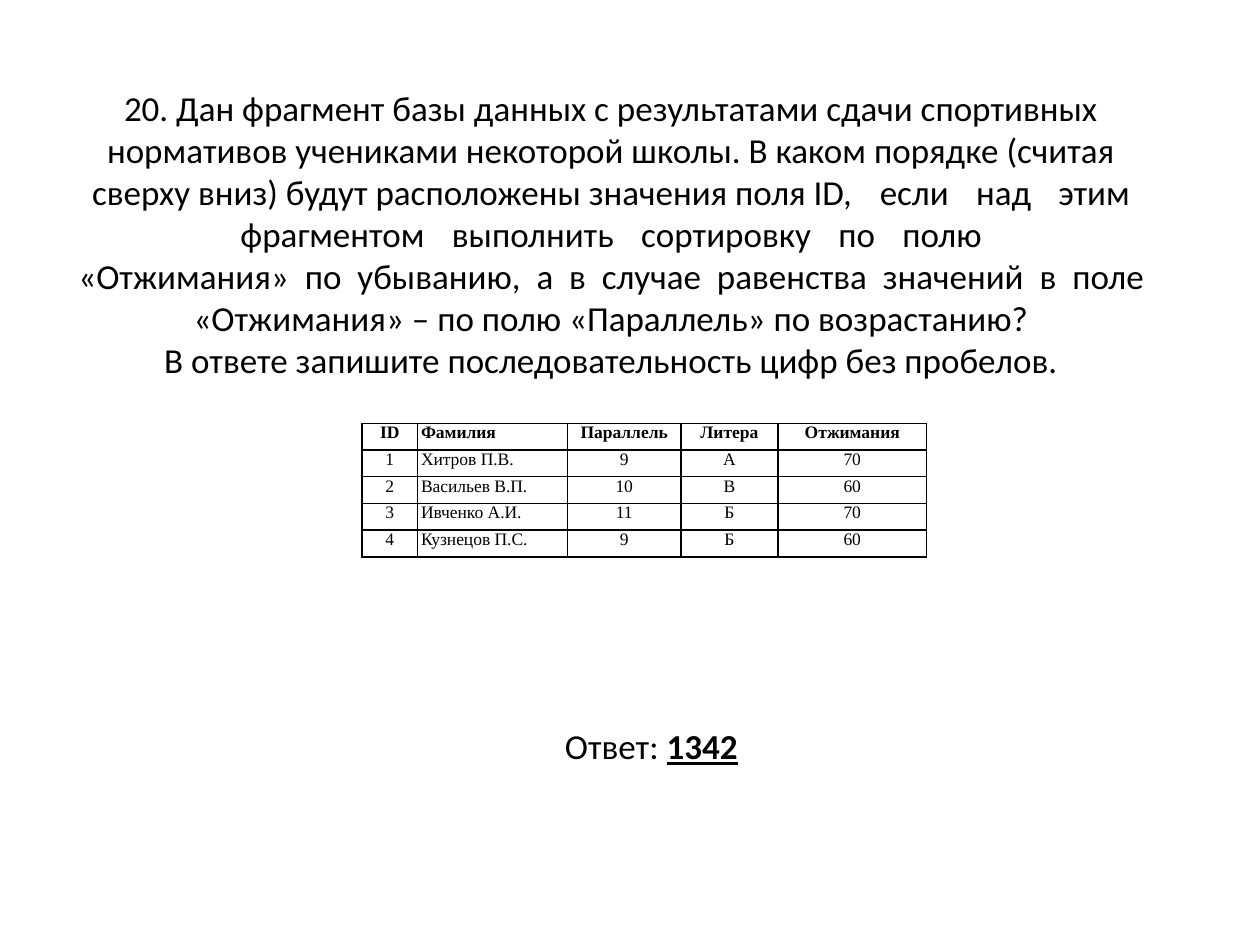
from lxml import etree
from pptx import Presentation
from pptx.dml.color import RGBColor
from pptx.enum.text import MSO_ANCHOR, PP_ALIGN
from pptx.oxml.ns import qn
from pptx.util import Pt

BLACK = RGBColor(0, 0, 0)
BODY_FONT = "Calibri"
TABLE_FONT = "Times New Roman"

# Each line holds (text, extra points added to every word gap).
QUESTION = [
    [("20. Дан фрагмент базы данных с результатами сдачи спортивных нормативов "
      "учениками некоторой школы. В каком порядке (считая сверху вниз) будут "
      "расположены значения поля ID,", 0),
     (" если над этим фрагментом выполнить сортировку по полю", 11)],
    [("«Отжимания» по убыванию, а в случае равенства значений в поле", 4.5)],
    [("«Отжимания» – по полю «Параллель» по возрастанию?", 0)],
    [("В ответе запишите последовательность цифр без пробелов.", 0)],
]
ANSWER_LABEL, ANSWER = "Ответ: ", "1342"
RESULTS = [
    ("ID", "Фамилия", "Параллель", "Литера", "Отжимания"),
    ("1", "Хитров П.В.", "9", "А", "70"),
    ("2", "Васильев В.П.", "10", "В", "60"),
    ("3", "Ивченко А.И.", "11", "Б", "70"),
    ("4", "Кузнецов П.С.", "9", "Б", "60"),
]
COLUMN_WIDTHS = (31.7, 85.7, 64.8, 55.4, 85)
ROW_HEIGHT = 15.26
NAME_COLUMN = 1


def add_centered_box(slide, left, top, width, height):
    text_frame = slide.shapes.add_textbox(
        Pt(left), Pt(top), Pt(width), Pt(height)).text_frame
    text_frame.word_wrap = True
    text_frame.vertical_anchor = MSO_ANCHOR.MIDDLE
    text_frame.paragraphs[0].alignment = PP_ALIGN.CENTER
    return text_frame


def format_run(run, font_name, size, bold=False):
    run.font.name = font_name
    run.font.size = Pt(size)
    run.font.bold = bold
    run.font.color.rgb = BLACK


def add_text(paragraph, text, gap=0):
    """Add text as runs; a positive gap widens each space by that many points."""
    pieces = text.replace(" ", "\n \n").split("\n") if gap else [text]
    for piece in filter(None, pieces):
        run = paragraph.add_run()
        run.text = piece
        format_run(run, BODY_FONT, 20)
        if piece == " ":
            run.font._element.set("spc", str(round(gap * 100)))
    return run


def add_question(slide):
    paragraph = add_centered_box(slide, 25.2, 44.5, 648, 178).paragraphs[0]
    for index, line in enumerate(QUESTION):
        if index:
            paragraph.add_line_break()
        for text, gap in line:
            add_text(paragraph, text, gap)


def set_borders(cell):
    properties = cell._tc.get_or_add_tcPr()
    for index, side in enumerate(("a:lnL", "a:lnR", "a:lnT", "a:lnB")):
        line = etree.Element(qn(side), w=str(Pt(1)))
        fill = etree.SubElement(line, qn("a:solidFill"))
        etree.SubElement(fill, qn("a:srgbClr"), val=str(BLACK))
        properties.insert(index, line)


def add_results(slide):
    table = slide.shapes.add_table(
        len(RESULTS), len(COLUMN_WIDTHS), Pt(206.9), Pt(241.9),
        Pt(sum(COLUMN_WIDTHS)), Pt(ROW_HEIGHT * len(RESULTS))).table
    for column, width in zip(table.columns, COLUMN_WIDTHS):
        column.width = Pt(width)
    for row_index, values in enumerate(RESULTS):
        table.rows[row_index].height = Pt(ROW_HEIGHT)
        for column_index, value in enumerate(values):
            is_name = column_index == NAME_COLUMN
            cell = table.cell(row_index, column_index)
            cell.margin_left = Pt(2) if is_name else 0
            cell.margin_right = cell.margin_top = cell.margin_bottom = 0
            cell.fill.background()
            set_borders(cell)
            paragraph = cell.text_frame.paragraphs[0]
            paragraph.text = value
            paragraph.alignment = PP_ALIGN.LEFT if is_name else PP_ALIGN.CENTER
            paragraph.space_before = Pt(1.8)
            format_run(paragraph.runs[0], TABLE_FONT, 10, bold=row_index == 0)


def add_answer(slide):
    text_frame = add_centered_box(slide, 48.2, 366.5, 648, 90)
    text_frame.margin_top = Pt(33)
    paragraph = text_frame.paragraphs[0]
    add_text(paragraph, ANSWER_LABEL)
    answer = add_text(paragraph, ANSWER)
    answer.font.bold = True
    answer.font.underline = True


def main():
    presentation = Presentation()
    presentation.slide_width, presentation.slide_height = Pt(720), Pt(540)
    slide = presentation.slides.add_slide(presentation.slide_layouts[6])
    add_question(slide)
    add_results(slide)
    add_answer(slide)
    presentation.save("out.pptx")


if __name__ == "__main__":
    main()
